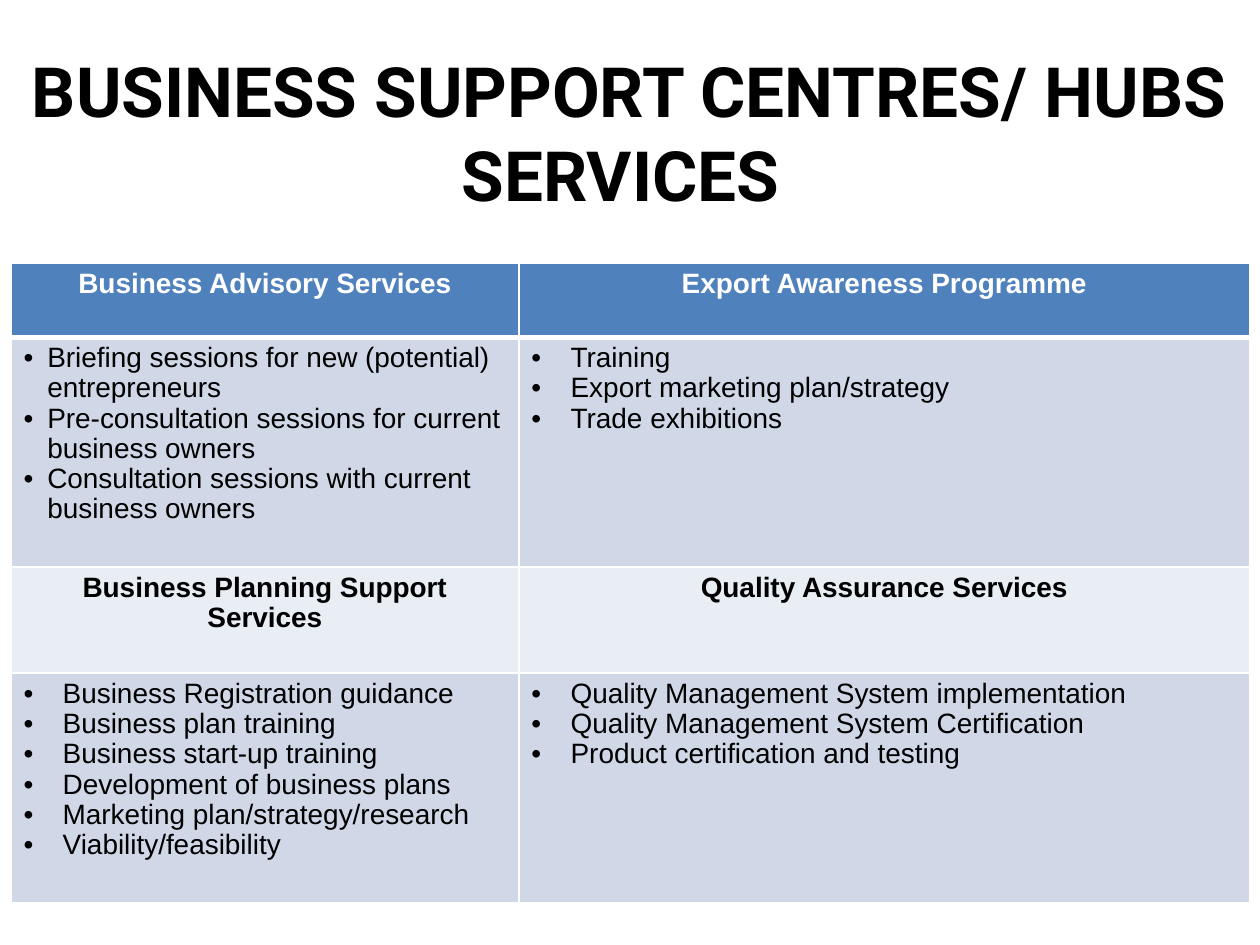
from dataclasses import dataclass

from lxml.etree import SubElement
from pptx import Presentation
from pptx.dml.color import RGBColor
from pptx.enum.text import MSO_ANCHOR as Anchor, PP_ALIGN as Align
from pptx.oxml.ns import qn
from pptx.slide import Slide
from pptx.util import Cm, Pt

WIDE_INDENT = 0.79
NARROW_INDENT = 0.48
HEADINGS = [
    ["Business Advisory Services", "Export Awareness Programme"],
    ["Business Planning Support Services", "Quality Assurance Services"],
]
SERVICES = [
    [
        [
            "Briefing sessions for new (potential) entrepreneurs",
            "Pre-consultation sessions for current business owners",
            "Consultation sessions with current business owners",
        ],
        ["Training", "Export marketing plan/strategy", "Trade exhibitions"],
    ],
    [
        [
            "Business Registration guidance",
            "Business plan training",
            "Business start-up training",
            "Development of business plans",
            "Marketing plan/strategy/research",
            "Viability/feasibility",
        ],
        [
            "Quality Management System implementation",
            "Quality Management System Certification",
            "Product certification and testing",
        ],
    ],
]
HEADING_STYLES = [("4F81BD", "FFFFFF", 3), ("E9EDF4", "000000", 1)]


def colour(value):
    return RGBColor.from_string(value)


@dataclass
class ServicesSlide:
    """Hold the style and the slide that the elements are added to."""

    slide: Slide
    title_font: str = "Roboto"
    body_font: str = "Arial"
    title_size: float = 39.6
    body_size: float = 16
    text_colour: str = "000000"
    border_colour: str = "FFFFFF"
    list_fill: str = "D0D8E8"

    def run(self, paragraph, text, font, size, text_colour, bold):
        run = paragraph.add_run()
        run.text = text
        run.font.name = font
        run.font.size = Pt(size)
        run.font.bold = bold
        run.font.color.rgb = colour(text_colour)

    def title(self, text, left, top, width, height):
        shape = self.slide.shapes.add_textbox(Cm(left), Cm(top), Cm(width), Cm(height))
        frame = shape.text_frame
        frame.word_wrap = True
        frame.vertical_anchor = Anchor.TOP
        frame.margin_top = Cm(0.88)
        paragraph = frame.paragraphs[0]
        paragraph.alignment = Align.CENTER
        self.run(paragraph, text, self.title_font, self.title_size, self.text_colour, True)

    def table(self, left, top, widths, heights):
        shape = self.slide.shapes.add_table(
            len(heights), len(widths), Cm(left), Cm(top), Cm(sum(widths)), Cm(sum(heights))
        )
        for column, width in zip(shape.table.columns, widths):
            column.width = Cm(width)
        for row, height in zip(shape.table.rows, heights):
            row.height = Cm(height)
        return shape.table

    def borders(self, cell, top, bottom):
        properties = cell._tc.get_or_add_tcPr()
        for index, (side, width) in enumerate(zip("LRTB", (1, 1, top, bottom))):
            line = properties.makeelement(qn(f"a:ln{side}"), {"w": str(Pt(width))})
            fill = SubElement(line, qn("a:solidFill"))
            SubElement(fill, qn("a:srgbClr"), val=self.border_colour)
            properties.insert(index, line)

    def fill(self, cell, fill_colour, top=1, bottom=1):
        cell.fill.solid()
        cell.fill.fore_color.rgb = colour(fill_colour)
        self.borders(cell, top, bottom)

    def body(self, paragraph, text, text_colour, bold):
        paragraph.line_spacing = 0.97
        self.run(paragraph, text, self.body_font, self.body_size, text_colour, bold)

    def heading(self, cell, text, fill_colour, text_colour, bottom):
        self.fill(cell, fill_colour, bottom=bottom)
        paragraph = cell.text_frame.paragraphs[0]
        paragraph.alignment = Align.CENTER
        self.body(paragraph, text, text_colour, True)

    def bullets(self, cell, items, indent, top):
        self.fill(cell, self.list_fill, top=top)
        frame = cell.text_frame
        for index, item in enumerate(items):
            paragraph = frame.add_paragraph() if index else frame.paragraphs[0]
            self.body(paragraph, item, self.text_colour, False)
            properties = paragraph._p.get_or_add_pPr()
            properties.set("marL", str(Cm(indent)))
            properties.set("indent", str(-Cm(indent)))
            SubElement(properties, qn("a:buFont"), typeface=self.body_font)
            SubElement(properties, qn("a:buChar"), char="•")


def main():
    presentation = Presentation()
    presentation.slide_width = Cm(25.4)
    presentation.slide_height = Cm(19.05)
    page = ServicesSlide(presentation.slides.add_slide(presentation.slide_layouts[6]))
    page.title("BUSINESS SUPPORT CENTRES/ HUBS SERVICES ", 0.2, 0.1, 24.97, 3.18)
    table = page.table(0.22, 5.3, [10.24, 14.73], [1.5, 4.63, 2.14, 4.63])
    for group, (fill_colour, text_colour, divider) in enumerate(HEADING_STYLES):
        for column in range(2):
            heading = table.cell(2 * group, column)
            services = table.cell(2 * group + 1, column)
            indent = NARROW_INDENT if group == column == 0 else WIDE_INDENT
            page.heading(heading, HEADINGS[group][column], fill_colour, text_colour, divider)
            page.bullets(services, SERVICES[group][column], indent, divider)
    presentation.save("out.pptx")


if __name__ == "__main__":
    main()
